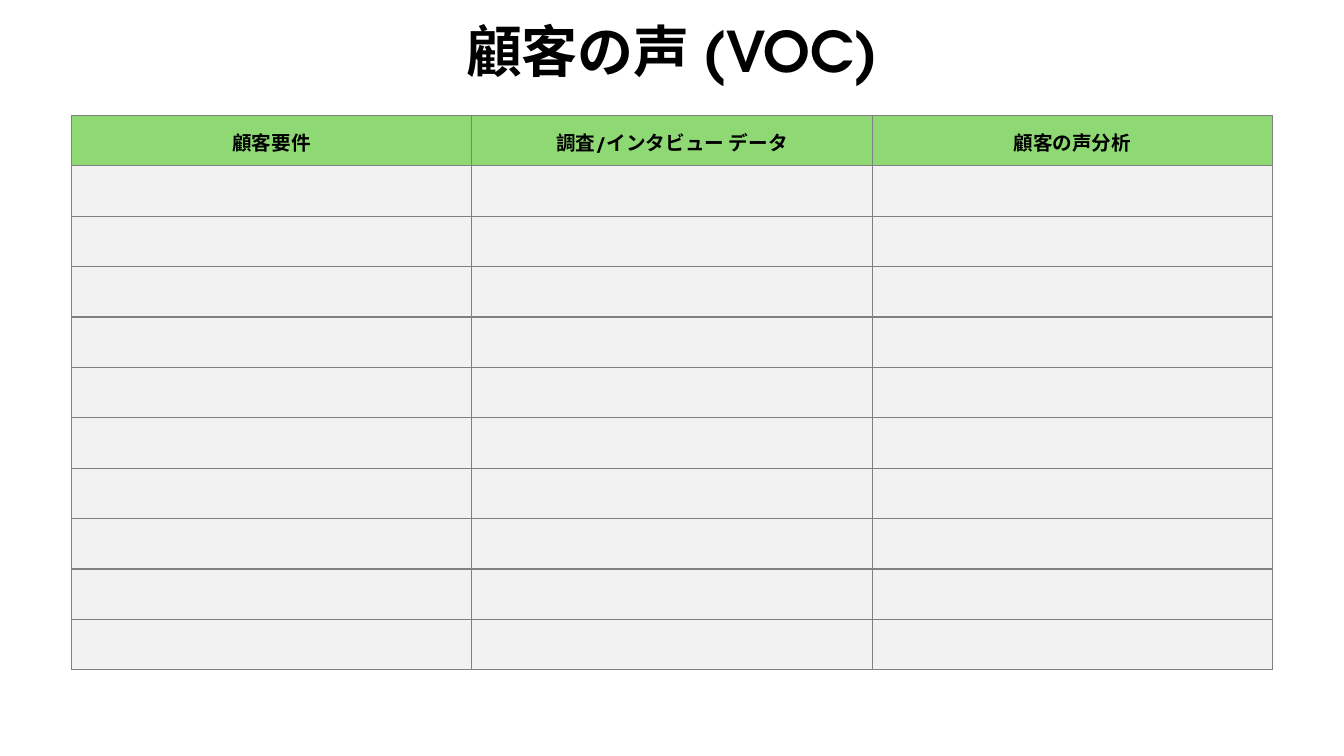
from lxml import etree
from pptx import Presentation
from pptx import util as u
from pptx.dml.color import RGBColor
from pptx.enum import text
from pptx.oxml import ns

PX = 9525
FONT = "TeX Gyre Adventor"
BLACK = RGBColor(0x00, 0x00, 0x00)
GREEN = RGBColor(0x8E, 0xD9, 0x73)
PALE_GRAY = RGBColor(0xF2, 0xF2, 0xF2)
BORDER_GRAY = RGBColor(0x80, 0x80, 0x80)
HEADINGS = ["顧客要件", "調査/インタビュー データ", "顧客の声分析"]
BODY_ROWS = 10


def px(length):
    return u.Emu(length * PX)


def write_heading(frame, wording, size, line_spacing, space_after):
    para = frame.paragraphs[0]
    para.text = wording
    para.alignment = text.PP_ALIGN.CENTER
    para.line_spacing = line_spacing
    para.space_after = u.Pt(space_after)
    para.font.name = FONT
    para.font.size = u.Pt(size)
    para.font.bold = True
    para.font.color.rgb = BLACK


def add_title(page, wording, left, top, width, height):
    box = page.shapes.add_textbox(px(left), px(top), px(width), px(height))
    frame = box.text_frame
    frame.word_wrap = True
    frame.vertical_anchor = text.MSO_ANCHOR.MIDDLE
    write_heading(frame, wording, 40, 0.9, 0)


def style_cell(cell, color):
    properties = cell._tc.get_or_add_tcPr()
    for side in ("a:lnL", "a:lnR", "a:lnT", "a:lnB"):
        line = etree.SubElement(properties, ns.qn(side), w=str(u.Pt(1)))
        fill = etree.SubElement(line, ns.qn("a:solidFill"))
        etree.SubElement(fill, ns.qn("a:srgbClr"), val=str(BORDER_GRAY))
    cell.fill.solid()
    cell.fill.fore_color.rgb = color


def add_voice_table(page, left, top, width, row_height):
    row_count = BODY_ROWS + 1
    table = page.shapes.add_table(
        row_count, len(HEADINGS),
        px(left), px(top), px(width), px(row_height * row_count),
    ).table
    table.first_row = False
    table.horz_banding = False
    for column in table.columns:
        column.width = px(width) // len(HEADINGS)
    for index, row in enumerate(table.rows):
        row.height = px(row_height)
        for cell in row.cells:
            style_cell(cell, PALE_GRAY if index else GREEN)
    for cell, wording in zip(table.rows[0].cells, HEADINGS):
        cell.vertical_anchor = text.MSO_ANCHOR.MIDDLE
        cell.margin_left = cell.margin_right = u.Inches(0.1)
        cell.margin_top = cell.margin_bottom = u.Inches(0.1)
        write_heading(cell.text_frame, wording, 14, 1.07, 4)


def main():
    deck = Presentation()
    deck.slide_width = px(1280)
    deck.slide_height = px(720)
    page = deck.slides.add_slide(deck.slide_layouts[6])
    add_title(page, "顧客の声 (VOC)", 225, 0, 830, 104)
    add_voice_table(page, 68, 110, 1144, 48)
    deck.save("out.pptx")


if __name__ == "__main__":
    main()
